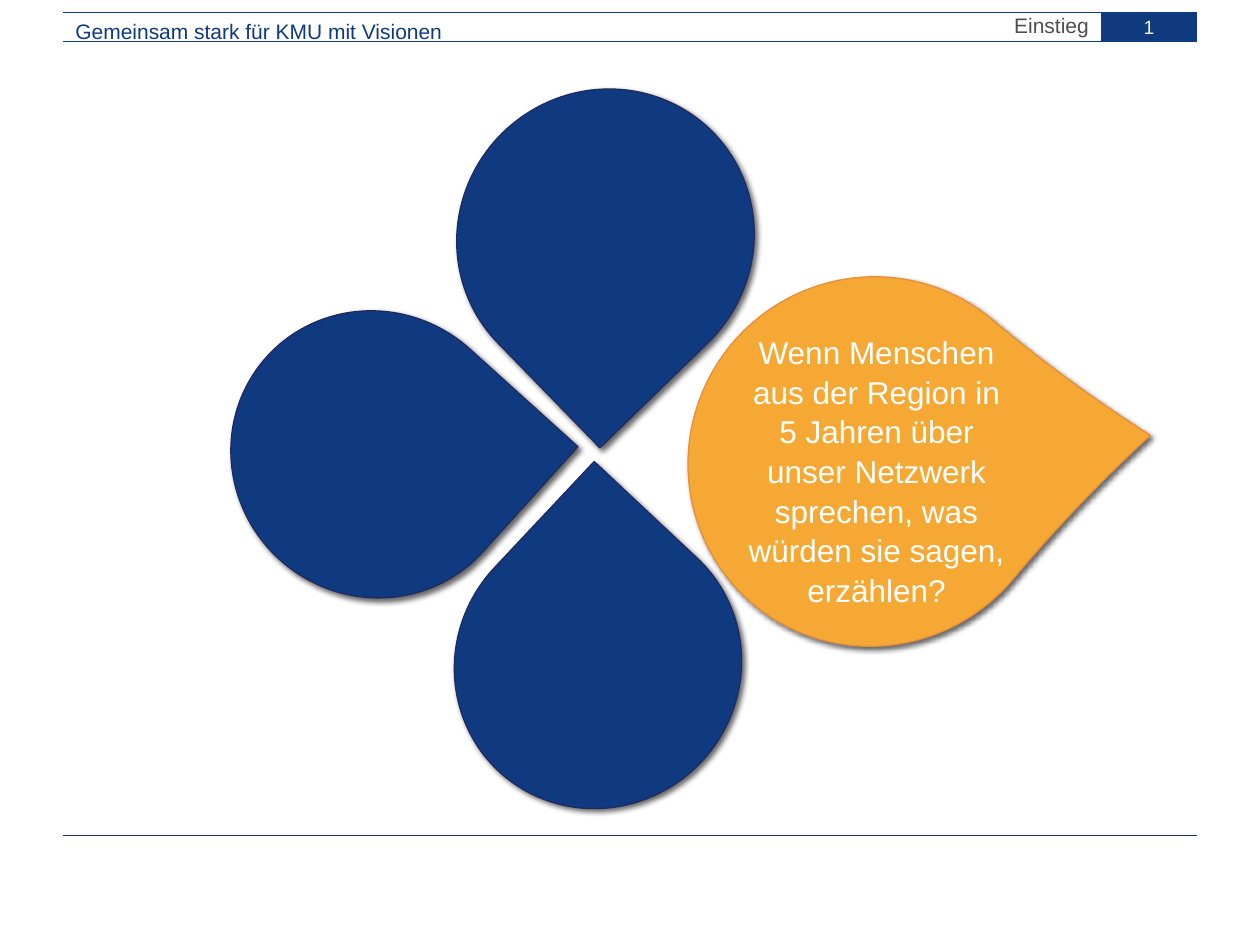
"""Build a slide with four petals, one of them carrying the opening question."""
import lxml.etree
import pptx
import pptx.dml.color
import pptx.enum.shapes
import pptx.enum.text
import pptx.oxml.ns
import pptx.util

Cm = pptx.util.Cm
Pt = pptx.util.Pt
qn = pptx.oxml.ns.qn
ALIGN = pptx.enum.text.PP_ALIGN
SHAPE = pptx.enum.shapes.MSO_SHAPE
BLUE, NAVY = "103A7F", "202A61"
ORANGE, DARK_ORANGE = "F5A934", "E98E38"


def color(value):
    return pptx.dml.color.RGBColor.from_string(value)


def write(holder, text, size, text_color, alignment):
    holder.text_frame.word_wrap = True
    paragraph = holder.text_frame.paragraphs[0]
    paragraph.alignment = alignment
    run = paragraph.add_run()
    run.text = text
    run.font.name = "Arial"
    run.font.size = Pt(size)
    run.font.color.rgb = color(text_color)


deck = pptx.Presentation()
deck.slide_width, deck.slide_height = Cm(25.4), Cm(19.05)
slide = deck.slides.add_slide(deck.slide_layouts[6])
shapes = slide.shapes

for y, rule_color in [(0.84, BLUE), (0.25, BLUE), (16.84, NAVY)]:
    rule = shapes.add_connector(
        pptx.enum.shapes.MSO_CONNECTOR.STRAIGHT, Cm(1.27), Cm(y), Cm(24.13), Cm(y))
    rule.line.color.rgb = color(rule_color)
    rule.line.width = Pt(0.5)
    lxml.etree.SubElement(rule.element.spPr, qn("a:effectLst"))

motto = shapes.add_textbox(Cm(1.27), Cm(0.25), Cm(10.92), Cm(0.71))
write(motto, "Gemeinsam stark für KMU mit Visionen", 12, BLUE, ALIGN.LEFT)

section = shapes.add_textbox(Cm(12.19), Cm(0.13), Cm(10.01), Cm(0.84))
write(section, "Einstieg", 12, "4E4E4E", ALIGN.RIGHT)

page_number = shapes.add_shape(SHAPE.RECTANGLE, Cm(22.2), Cm(0.25), Cm(1.93), Cm(0.59))
page_number.shadow.inherit = False
page_number.fill.solid()
page_number.fill.fore_color.rgb = color(BLUE)
page_number.line.fill.background()
page_number.text_frame.vertical_anchor = pptx.enum.text.MSO_ANCHOR.MIDDLE
write(page_number, "1", 11, "F3F2DC", ALIGN.CENTER)

petals = [
    (9.17, 1.83, 6.07, 5.92, 135.8, 1, BLUE, NAVY),
    (4.62, 6.3, 5.87, 5.72, 42.1, 1, BLUE, NAVY),
    (9.12, 10.54, 5.87, 5.72, 313.2, 1, BLUE, NAVY),
    (13.89, 5.56, 7.39, 7.49, 40, 1.07, ORANGE, DARK_ORANGE),
]
for left, top, width, height, angle, tip, fill_color, edge_color in petals:
    petal = shapes.add_shape(SHAPE.TEAR, Cm(left), Cm(top), Cm(width), Cm(height))
    petal.rotation = angle
    petal.adjustments[0] = tip
    petal.fill.solid()
    petal.fill.fore_color.rgb = color(fill_color)
    petal.line.color.rgb = color(edge_color)
    petal.line.width = Pt(0.75)
    petal.shadow.inherit = False
    effects = petal.element.spPr.find(qn("a:effectLst"))
    shadow = lxml.etree.SubElement(
        effects, qn("a:outerShdw"), blurRad=str(Pt(3)), dist=str(Pt(2)),
        dir=str(45 * 60000), algn="ctr", rotWithShape="0")
    shade = lxml.etree.SubElement(shadow, qn("a:srgbClr"), val="000000")
    lxml.etree.SubElement(shade, qn("a:alpha"), val="60000")

question = shapes.add_textbox(Cm(14.81), Cm(6.55), Cm(5.72), Cm(5.64))
write(question,
      "Wenn Menschen aus der Region in 5 Jahren über unser Netzwerk sprechen, "
      "was würden sie sagen, erzählen?", 18, "FFFFFF", ALIGN.CENTER)
question.text_frame.auto_size = pptx.enum.text.MSO_AUTO_SIZE.SHAPE_TO_FIT_TEXT
question.text_frame.paragraphs[0].line_spacing = 1.05

deck.save("out.pptx")
